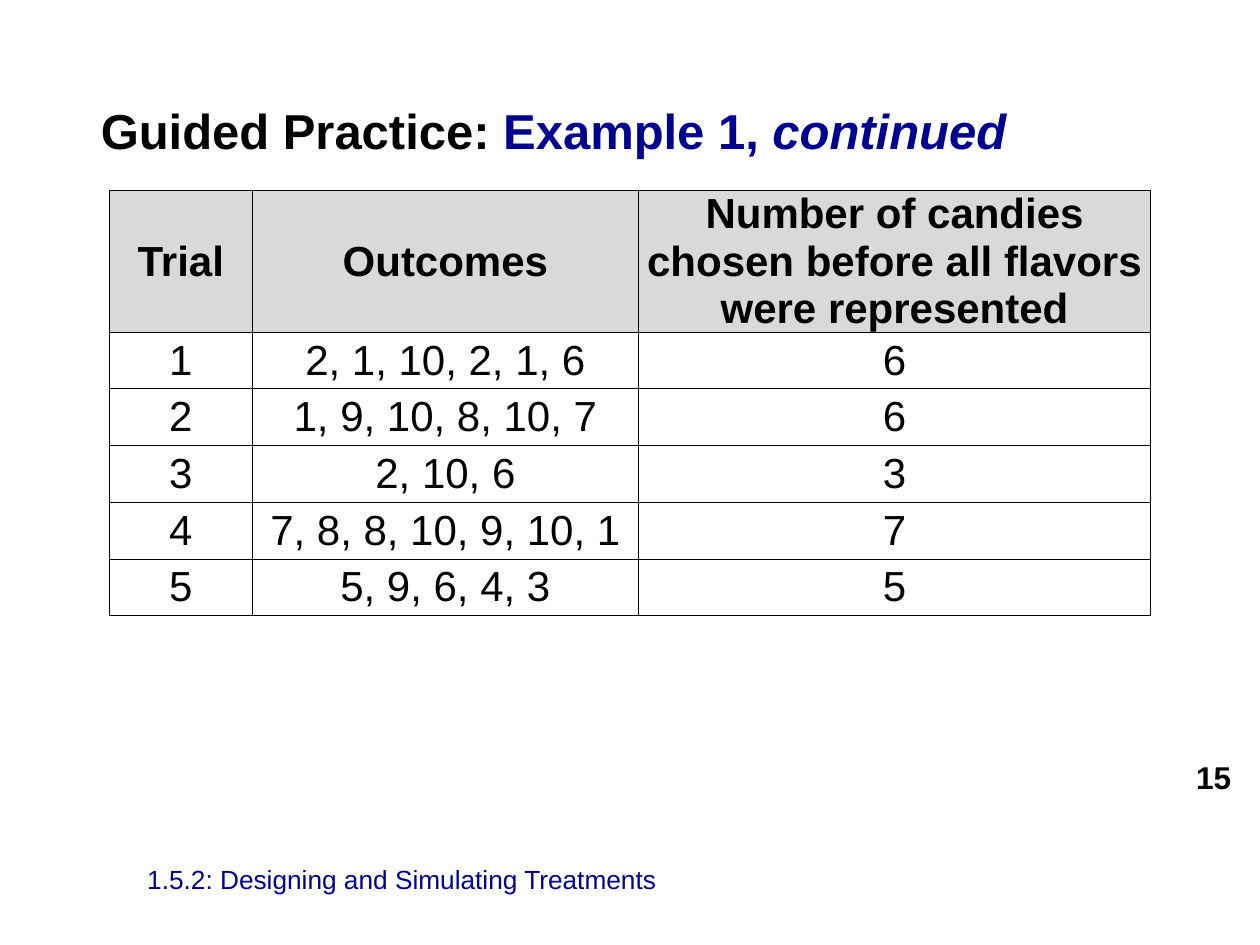
from dataclasses import dataclass

from lxml import etree
from pptx import Presentation
from pptx.dml.color import RGBColor
from pptx.enum.text import MSO_ANCHOR, PP_ALIGN
from pptx.oxml.ns import qn
from pptx.util import Inches, Pt

LEFT, CENTER, RIGHT = PP_ALIGN.LEFT, PP_ALIGN.CENTER, PP_ALIGN.RIGHT
MIDDLE = MSO_ANCHOR.MIDDLE
TITLE_ONLY = 5


@dataclass(frozen=True)
class Theme:
    """Colours, font and type sizes of the slide."""
    font: str = "Arial"
    black: str = "000000"
    navy: str = "000090"
    header_fill: str = "D9D9D9"
    white: str = "FFFFFF"
    title_size: int = 28
    table_size: int = 24
    header_leading: int = 27
    number_size: int = 18
    footer_size: int = 15
    border_width: float = 0.5


THEME = Theme()
HEADERS = ["Trial", "Outcomes",
           "Number of candies chosen before all flavors were represented"]
TRIALS = [
    [2, 1, 10, 2, 1, 6],
    [1, 9, 10, 8, 10, 7],
    [2, 10, 6],
    [7, 8, 8, 10, 9, 10, 1],
    [5, 9, 6, 4, 3],
]
COLUMN_WIDTHS = [1.13, 3.07, 4.06]
HEADER_HEIGHT, ROW_HEIGHT = 1.12, 0.45


def add_text(paragraph, text, size, color=THEME.black, bold=False,
             italic=False, align=LEFT):
    """Append a formatted run to a paragraph."""
    paragraph.alignment = align
    run = paragraph.add_run()
    run.text = text
    run.font.name = THEME.font
    run.font.size = Pt(size)
    run.font.bold = bold
    run.font.italic = italic
    run.font.color.rgb = RGBColor.from_string(color)


def set_borders(cell):
    """Draw a thin black line on all four sides of a cell."""
    properties = cell._tc.get_or_add_tcPr()
    for position, side in enumerate(("a:lnL", "a:lnR", "a:lnT", "a:lnB")):
        line = etree.Element(qn(side), w=str(Pt(THEME.border_width)))
        fill = etree.SubElement(line, qn("a:solidFill"))
        etree.SubElement(fill, qn("a:srgbClr"), val=THEME.black)
        properties.insert(position, line)


def fill_cell(cell, text, is_header):
    """Write and format one table cell."""
    cell.fill.solid()
    cell.fill.fore_color.rgb = RGBColor.from_string(
        THEME.header_fill if is_header else THEME.white)
    cell.margin_left = cell.margin_right = Inches(0.01)
    cell.margin_top = cell.margin_bottom = 0
    cell.vertical_anchor = MIDDLE
    paragraph = cell.text_frame.paragraphs[0]
    if is_header:
        paragraph.line_spacing = Pt(THEME.header_leading)
    add_text(paragraph, text, THEME.table_size, bold=is_header, align=CENTER)
    set_borders(cell)


def place_title(slide, left, top, width, height):
    """Move the title placeholder into its box and write the heading."""
    title = slide.shapes.title
    title.left, title.top = Inches(left), Inches(top)
    title.width, title.height = Inches(width), Inches(height)
    title.text_frame.vertical_anchor = MIDDLE
    paragraph = title.text_frame.paragraphs[0]
    size = THEME.title_size
    add_text(paragraph, "Guided Practice: ", size, bold=True)
    add_text(paragraph, "Example 1, ", size, color=THEME.navy, bold=True)
    add_text(paragraph, "continued", size, color=THEME.navy, bold=True,
             italic=True)


def place_trials(slide, left, top):
    """Place the table of simulated trials."""
    rows = [HEADERS] + [
        [str(trial), ", ".join(map(str, outcomes)), str(len(outcomes))]
        for trial, outcomes in enumerate(TRIALS, start=1)]
    heights = [HEADER_HEIGHT] + [ROW_HEIGHT] * len(TRIALS)
    table = slide.shapes.add_table(
        len(rows), len(HEADERS), Inches(left), Inches(top),
        Inches(sum(COLUMN_WIDTHS)), Inches(sum(heights))).table
    table.horz_banding = False
    for column, width in zip(table.columns, COLUMN_WIDTHS):
        column.width = Inches(width)
    for row_index, (values, height) in enumerate(zip(rows, heights)):
        table.rows[row_index].height = Inches(height)
        for column_index, value in enumerate(values):
            fill_cell(table.cell(row_index, column_index), value,
                      is_header=row_index == 0)


def place_label(slide, left, top, width, height, text, size, **text_format):
    """Place a one-line label, centred vertically in its box."""
    box = slide.shapes.add_textbox(
        Inches(left), Inches(top), Inches(width), Inches(height))
    box.text_frame.word_wrap = True
    box.text_frame.vertical_anchor = MIDDLE
    add_text(box.text_frame.paragraphs[0], text, size, **text_format)


def main():
    """Build the slide and save it."""
    presentation = Presentation()
    presentation.slide_width = Inches(10)
    presentation.slide_height = Inches(7.5)
    slide = presentation.slides.add_slide(
        presentation.slide_layouts[TITLE_ONLY])
    place_title(slide, 0.7, 0.7, 8.72, 0.66)
    place_trials(slide, 0.87, 1.51)
    place_label(slide, 9.07, 6.01, 0.8, 0.31, "15", THEME.number_size,
                bold=True, align=RIGHT)
    place_label(slide, 1.07, 6.83, 6.28, 0.29,
                "1.5.2: Designing and Simulating Treatments",
                THEME.footer_size, color=THEME.navy)
    presentation.save("out.pptx")


if __name__ == "__main__":
    main()
